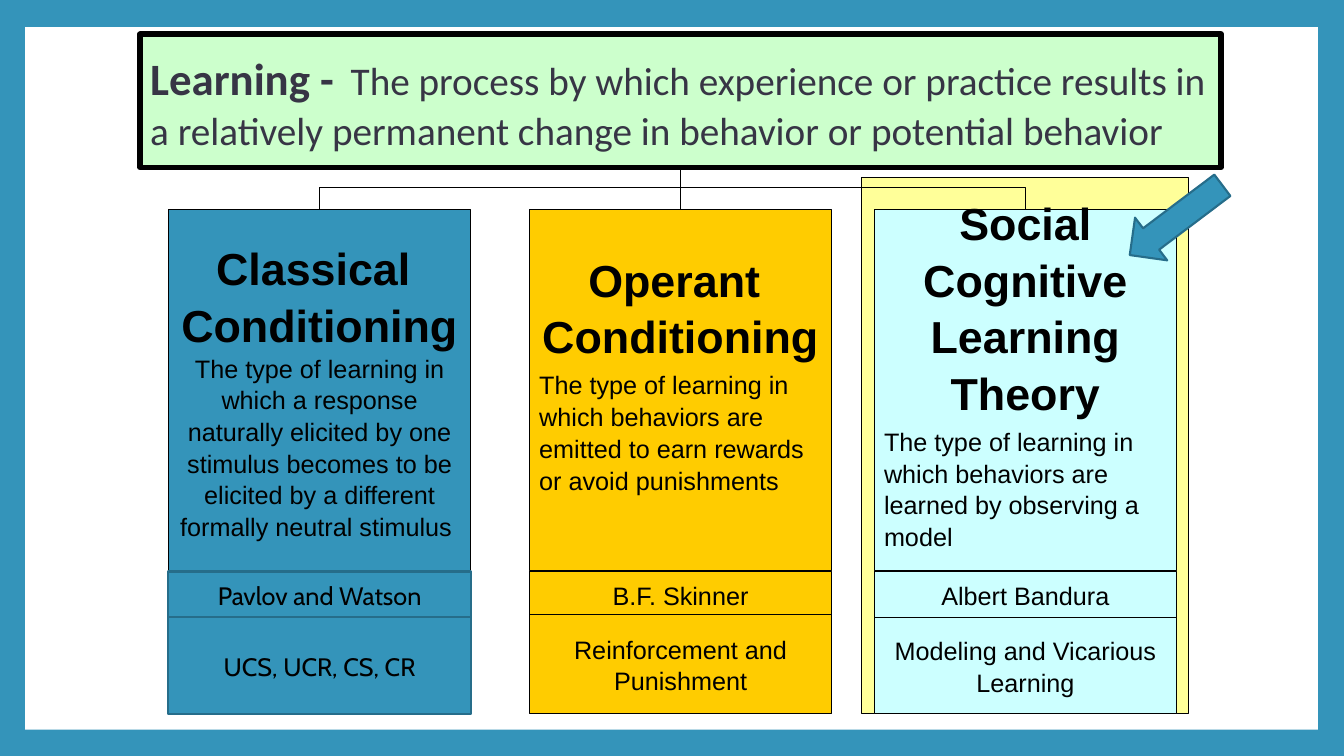
from lxml import etree
from pptx import Presentation
from pptx.dml.color import RGBColor
from pptx.enum.shapes import MSO_CONNECTOR as LINE, MSO_SHAPE as SHAPE
from pptx.enum.text import MSO_ANCHOR as ANCHOR, MSO_AUTO_SIZE as AUTO, PP_ALIGN as ALIGN
from pptx.oxml.ns import qn
from pptx.util import Pt

PX = 9144
BLUE, EDGE, BLACK = "3494BA", "266D8A", "000000"


def rgb(value):
    return RGBColor.from_string(value)


def set_attrs(obj, values):
    for name, value in values.items():
        setattr(obj, name, value)


class Deck:
    frame = {"word_wrap": True, "auto_size": AUTO.NONE, "vertical_anchor": ANCHOR.MIDDLE}
    spacing = 1.05

    def __init__(self, width, height, background):
        self.prs = Presentation()
        set_attrs(self.prs, {"slide_width": width * PX, "slide_height": height * PX})
        self.slide = self.prs.slides.add_slide(self.prs.slide_layouts[5])
        self.shapes = self.slide.shapes
        fill = self.slide.background.fill
        fill.solid()
        fill.fore_color.rgb = rgb(background)

    def paint(self, sp, fill, line=None, weight=0.75, alpha=None):
        sp.fill.solid()
        sp.fill.fore_color.rgb = rgb(fill)
        if alpha:
            clr = sp._element.spPr.find(".//" + qn("a:srgbClr"))
            etree.SubElement(clr, qn("a:alpha")).set("val", str(alpha * 1000))
        if line:
            sp.line.color.rgb = rgb(line)
            sp.line.width = Pt(weight)
        else:
            sp.line.fill.background()

    def shape(self, box, fill, line=None, weight=0.75, kind=SHAPE.RECTANGLE, alpha=None, turn=0):
        sp = self.shapes.add_shape(kind, *(v * PX for v in box))
        sp.shadow.inherit = False
        sp.rotation = turn
        self.paint(sp, fill, line, weight, alpha)
        return sp

    def text(self, sp, paragraphs, font="Arial", color=BLACK, bottom=5):
        tf = sp.text_frame
        set_attrs(tf, self.frame)
        tf.margin_bottom = bottom * PX
        for i, (align, before, runs) in enumerate(paragraphs):
            p = tf.add_paragraph() if i else tf.paragraphs[0]
            set_attrs(p, {"alignment": align, "space_before": Pt(before), "line_spacing": self.spacing})
            for text, size, bold in runs:
                r = p.add_run()
                r.text = text
                set_attrs(r.font, {"name": font, "size": Pt(size), "bold": bold})
                r.font.color.rgb = rgb(color)

    def title(self, box, fill, line, weight, runs, font, color):
        sp = self.shapes.title
        set_attrs(sp, dict(zip(("left", "top", "width", "height"), (v * PX for v in box))))
        self.paint(sp, fill, line, weight)
        self.text(sp, [(ALIGN.LEFT, 0, runs)], font, color)
        self.shapes._spTree.append(sp._element)

    def branch(self, x0, y0, x1, y1):
        if x0 == x1:
            cxn = self.shapes.add_connector(LINE.STRAIGHT, x0 * PX, y0 * PX, x1 * PX, y1 * PX)
        else:
            cx, cy = (x0 + x1) / 2, (y0 + y1) / 2
            side = 1 if x1 > x0 else -1
            dx, dy = side * (y1 - y0) / 2, abs(x1 - x0) / 2
            ends = (cx + dx, cy - dy, cx - dx, cy + dy)
            if side < 0:
                ends = (cx + dx, cy - dy, cx - dx, cy + dy)
            cxn = self.shapes.add_connector(LINE.ELBOW, *(int(v * PX) for v in ends))
            xfrm = cxn._element.spPr.find(qn("a:xfrm"))
            xfrm.set("rot", str((270 if side > 0 else 90) * 60000))
        cxn.line.color.rgb = rgb(BLACK)
        cxn.line.width = Pt(0.75)
        etree.SubElement(cxn._element.spPr, qn("a:effectLst"))


def heading(text):
    return ALIGN.CENTER, 0, [(text, 32, True)]


def body(text, align=ALIGN.LEFT, before=4):
    return align, before, [(text, 18, False)]


COLUMNS = [
    (167, BLUE, EDGE, 1.5, "Cabin", 5, 612,
     [heading("Classical "), heading("Conditioning"),
      body("The type of learning in which a response naturally elicited by one stimulus "
           "becomes to be elicited by a different formally neutral stimulus ", ALIGN.CENTER, 0)],
     "Pavlov and Watson", "UCS, UCR, CS, CR"),
    (525, "FFCC00", BLACK, 0.75, "Arial", 40, 610,
     [heading("Operant "), heading("Conditioning"),
      body("The type of learning in which behaviors are emitted to earn rewards or avoid punishments")],
     "B.F. Skinner", "Reinforcement and Punishment"),
    (867, "CCFFFF", BLACK, 0.75, "Arial", 40, 613,
     [heading("Social Cognitive Learning Theory"),
      body("The type of learning in which behaviors are learned by observing a model")],
     "Albert Bandura", "Modeling and Vicarious Learning"),
]
WIDTH, TOP, NAMES, BOTTOM = 300, 208, 567, 708


def main():
    deck = Deck(1333, 750, BLUE)
    deck.shape((25, 27, 1282, 697), "FFFFFF")
    deck.shape((854, 176, 325, 532), "FFFF00", BLACK, alpha=40)
    deck.title((139, 34, 1072, 132), "CCFFCC", BLACK, 4,
               [("Learning - ", 32, True), (" ", 20, False),
                ("The process by which experience or practice results in a relatively "
                 "permanent change in behavior or potential behavior", 28, False)],
               "Calibri", "373545")
    for x, fill, line, weight, font, inset, split, theory, people, terms in COLUMNS:
        sp = deck.shape((x, TOP, WIDTH, 358), fill, BLACK)
        deck.text(sp, theory, bottom=inset)
        deck.branch(675, 165, x + WIDTH // 2, TOP)
        for label, top, height in ((people, NAMES, 46), (terms, split, BOTTOM - split)):
            sp = deck.shape((x, top, WIDTH, height), fill, line, weight)
            deck.text(sp, [body(label, ALIGN.CENTER, 0)], font)
    deck.shape((1140, 161, 53, 115), BLUE, EDGE, 1.5, SHAPE.DOWN_ARROW, turn=53)
    deck.prs.save("out.pptx")


if __name__ == "__main__":
    main()
